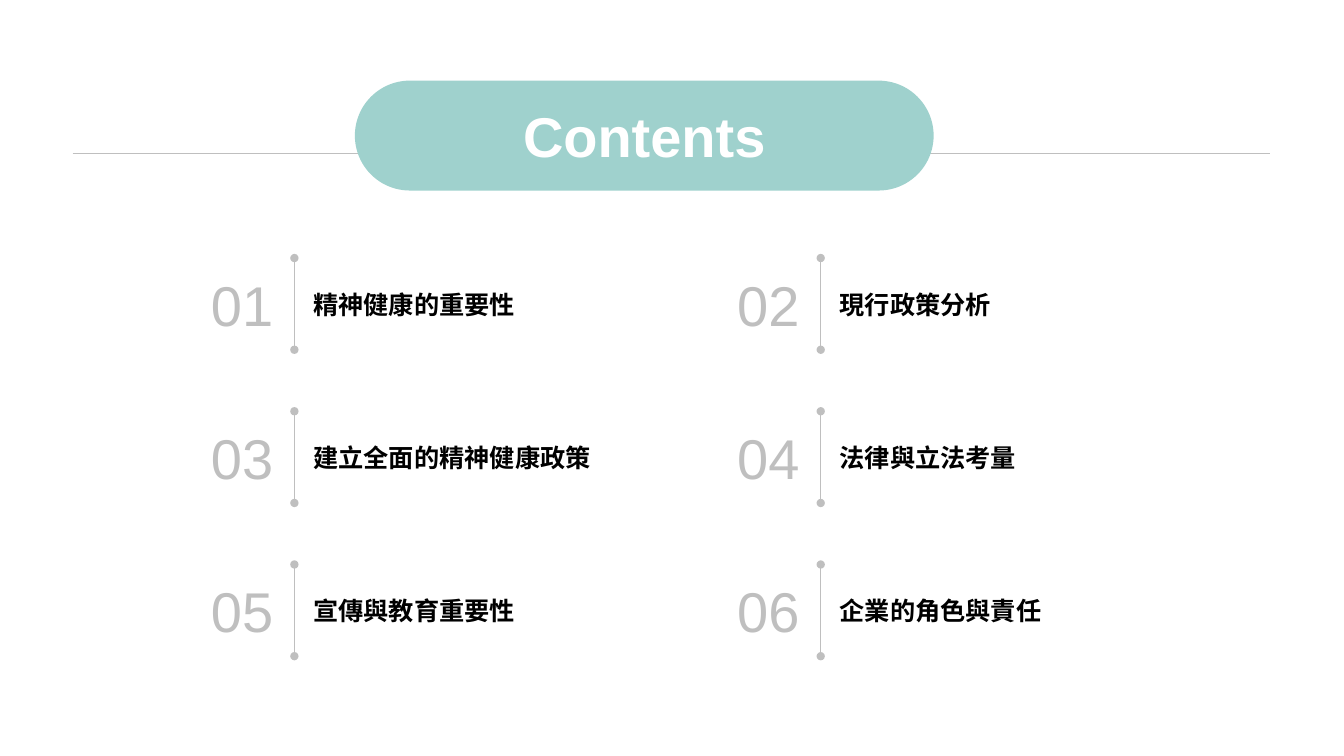
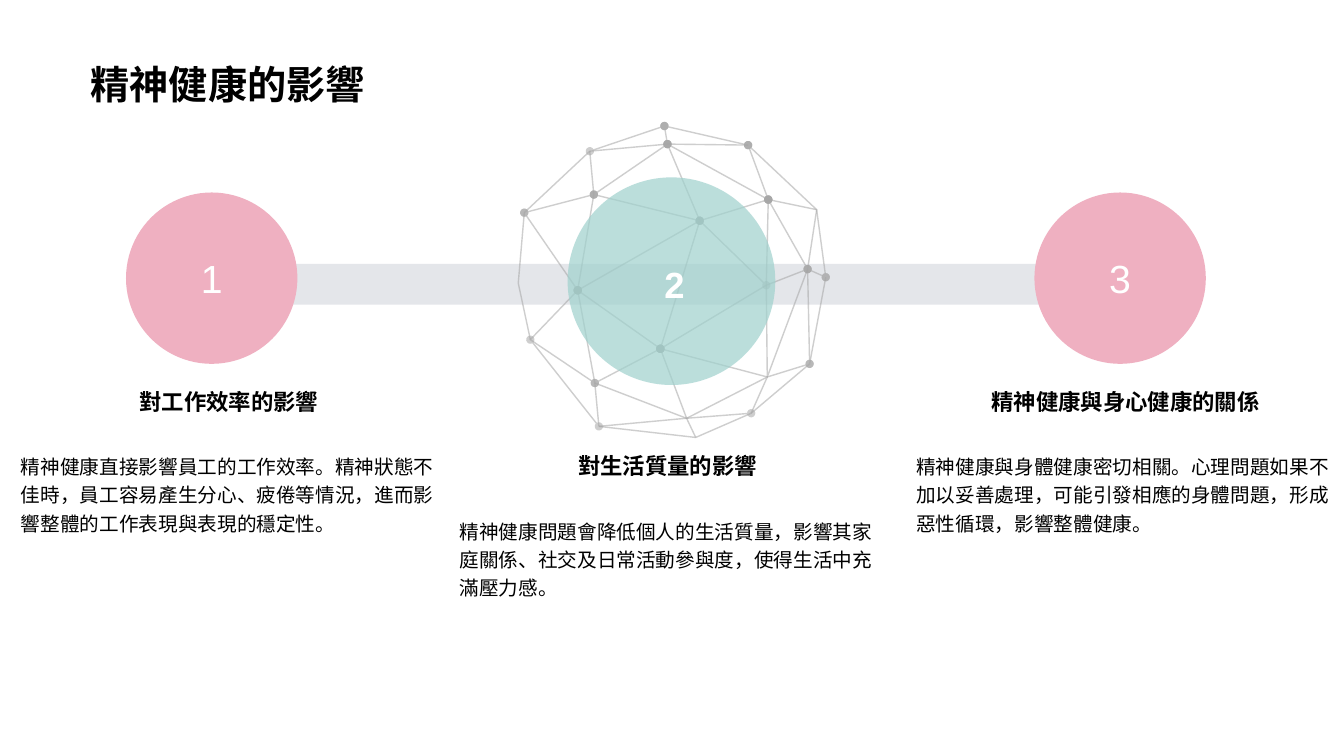
import lxml.etree
import pptx
import pptx.dml.color
import pptx.enum.shapes
import pptx.enum.text
import pptx.oxml.ns
import pptx.util

Inches = pptx.util.Inches
qn = pptx.oxml.ns.qn
SHAPES = pptx.enum.shapes.MSO_SHAPE
STRAIGHT = pptx.enum.shapes.MSO_CONNECTOR.STRAIGHT
ANCHORS = pptx.enum.text.MSO_ANCHOR
ALIGNS = pptx.enum.text.PP_ALIGN

COLOURS = {"mint": "9FD1CD", "pink": "EFB0C1", "band": "E4E6EA", "rule": "BFBFBF",
           "net": "A6A6A6", "ink": "000000", "paper": "FFFFFF"}
LATIN = "Arial"
CHINESE = "Noto Sans CJK SC"

STYLES = {
    "contents": {"size": 40, "name": LATIN, "bold": True, "colour": "paper"},
    "number": {"size": 40, "name": LATIN, "bold": False, "colour": "rule"},
    "topic": {"size": 18, "name": CHINESE, "bold": True, "colour": "ink"},
    "title": {"size": 28, "name": CHINESE, "bold": True, "colour": "ink"},
    "step": {"size": 28, "name": LATIN, "bold": False, "colour": "paper"},
    "core": {"size": 26, "name": LATIN, "bold": True, "colour": "paper"},
    "label": {"size": 16, "name": CHINESE, "bold": True, "colour": "ink"},
    "body": {"size": 14, "name": CHINESE, "bold": False, "colour": "ink"},
}

TOPICS = ["精神健康的重要性", "現行政策分析", "建立全面的精神健康政策",
          "法律與立法考量", "宣傳與教育重要性", "企業的角色與責任"]

IMPACTS = [
    (0.11, 3.8, 4.32, "對工作效率的影響",
     "精神健康直接影響員工的工作效率。精神狀態不佳時，員工容易產生分心、疲倦等情況，進而影響整體的工作表現與表現的穩定性。"),
    (4.46, 4.44, 4.32, "對生活質量的影響",
     "精神健康問題會降低個人的生活質量，影響其家庭關係、社交及日常活動參與度，使得生活中充滿壓力感。"),
    (8.99, 3.8, 4.35, "精神健康與身心健康的關係",
     "精神健康與身體健康密切相關。心理問題如果不加以妥善處理，可能引發相應的身體問題，形成惡性循環，影響整體健康。"),
]

NODES = {
    "A": (1.45, 0), "B": (2.28, 0.19), "C": (2.96, 0.83), "D": (3.05, 1.5),
    "E": (2.89, 2.36), "F": (2.31, 2.85), "G": (1.76, 3.09), "H": (0.8, 2.98),
    "I": (0.12, 2.12), "J": (0, 1.56), "K": (0.06, 0.86), "L": (0.71, 0.25),
    "M": (1.48, 0.18), "N": (0.75, 0.68), "O": (0.59, 1.63), "P": (0.76, 2.55),
    "Q": (1.41, 2.21), "R": (1.67, 2.9), "S": (1.8, 0.94), "T": (2.48, 0.73),
    "U": (2.87, 1.42), "V": (2.46, 1.58), "W": (2.47, 2.49),
}
STRANDS = {
    (): "HGFED KJI LMB OPH LK UCT PRWF",
    ("headEnd",): "QRG EU TVWU FRH",
    ("tailEnd",): "LNO",
    ("headEnd", "tailEnd"): "BA DCB IH AL MSQ AM DU TB UT QWE OQ KO NK MN TM "
                            "ST OS PIO QP UVQ SV NS",
}


def paint(colour_format, colour, opacity=100):
    colour_format.rgb = pptx.dml.color.RGBColor.from_string(COLOURS[colour])


def fade(properties, opacity):
    for colour in properties.iter(qn("a:srgbClr")):
        lxml.etree.SubElement(colour, qn("a:alpha"), val=str(opacity * 1000))


def write(shape, text, style, align=ALIGNS.CENTER, anchor=ANCHORS.MIDDLE, spacing=1.0):
    frame = shape.text_frame
    for name, value in {"word_wrap": True, "vertical_anchor": anchor}.items():
        setattr(frame, name, value)
    para = frame.paragraphs[0]
    for name, value in {"alignment": align, "line_spacing": spacing}.items():
        setattr(para, name, value)
    span = para.add_run()
    span.text = text
    look = STYLES[style]
    values = {"size": pptx.util.Pt(look["size"]), "name": look["name"], "bold": look["bold"]}
    for name, value in values.items():
        setattr(span.font, name, value)
    span.font.fill.solid()
    paint(span.font.fill.fore_color, look["colour"])
    lxml.etree.SubElement(span.font.fill._xPr, qn("a:ea"), typeface=look["name"])


def add_text(shapes, box, text, style, **layout):
    shape = shapes.add_textbox(*map(Inches, box))
    write(shape, text, style, **layout)
    return shape


def add_filled(shapes, kind, box, colour, adjustments=()):
    shape = shapes.add_shape(kind, *map(Inches, box))
    for index, value in enumerate(adjustments):
        shape.adjustments[index] = value
    shape.fill.solid()
    paint(shape.fill.fore_color, colour)
    shape.line.fill.background()
    shape.shadow.inherit = False
    return shape


def add_path(shapes, points, colour, width, dotted_ends=()):
    places = [(Inches(x), Inches(y)) for x, y in points]
    if len(places) == 2:
        shape = shapes.add_connector(STRAIGHT, *places[0], *places[1])
        lxml.etree.SubElement(shape.element.spPr, qn("a:effectLst"))
    else:
        builder = shapes.build_freeform(*places[0], scale=1.0)
        builder.add_line_segments(places[1:], close=False)
        shape = builder.convert_to_shape()
        shape.fill.background()
        shape.shadow.inherit = False
    shape.line.width = pptx.util.Pt(width)
    shape.line.fill.solid()
    paint(shape.line.fill.fore_color, colour)
    outline = shape.element.spPr.find(qn("a:ln"))
    for end in dotted_ends:
        lxml.etree.SubElement(outline, qn("a:" + end), type="oval")
    return outline


def add_topic(page, left, top, number, topic):
    height = 0.91
    shape = add_text(page.shapes, (left, top, 0.82, height), f"{number:02}", "number")
    for side in ("margin_left", "margin_right"):
        setattr(shape.text_frame, side, 0)
    add_text(page.shapes, (left + 1.02, top + 0.26, 3.94, 0.4), topic, "topic",
             align=ALIGNS.LEFT)
    divider = left + 0.93
    add_path(page.shapes, [(divider, top), (divider, top + height)], "rule", 1,
             ("headEnd", "tailEnd"))


def add_globe(page, left, top):
    globe = page.shapes.add_group_shape().shapes
    for dotted_ends, strands in STRANDS.items():
        for strand in strands.split():
            points = [(left + NODES[node][0], top + NODES[node][1]) for node in strand]
            fade(add_path(globe, points, "net", 1, dotted_ends), 54)
    core = add_filled(globe, SHAPES.OVAL, (left + 0.49, top + 0.51, 2.06, 2.06), "mint")
    fade(core.element.spPr, 70)
    add_text(globe, (left + 0.59, top + 1.3, 1.92, 0.48), "2", "core", anchor=ANCHORS.TOP)


def add_step(page, left, top, number):
    circle = add_filled(page.shapes, SHAPES.OVAL, (left, top, 1.7, 1.7), "pink")
    write(circle, number, "step")


def add_impact(page, left, top, width, label, body):
    add_text(page.shapes, (left, top, width, 0.37), label, "label", anchor=ANCHORS.TOP)
    add_text(page.shapes, (left, top + 0.62, width, 0.73), body, "body",
             align=ALIGNS.LEFT, anchor=ANCHORS.TOP, spacing=1.2)


def build_contents(page):
    add_path(page.shapes, [(0.72, 1.52), (12.6, 1.52)], "rule", 0.25)
    banner = add_filled(page.shapes, SHAPES.ROUNDED_RECTANGLE, (3.52, 0.8, 5.74, 1.09),
                        "mint", [0.5])
    write(banner, "Contents", "contents")
    for index, topic in enumerate(TOPICS):
        row, column = divmod(index, 2)
        add_topic(page, 1.99 + column * 5.22, 2.56 + row * 1.52, index + 1, topic)


def build_impacts(page):
    add_text(page.shapes, (0.8, 0, 11.73, 1.12), "精神健康的影響", "title",
             align=ALIGNS.LEFT, anchor=ANCHORS.BOTTOM, spacing=0.9)
    add_filled(page.shapes, SHAPES.RIGHT_ARROW, (2.68, 2.56, 8.04, 0.52), "band", [0.78, 0.5])
    add_step(page, 1.25, 1.91, "1")
    add_globe(page, 5.14, 1.25)
    add_step(page, 10.26, 1.91, "3")
    for impact in IMPACTS:
        add_impact(page, *impact)


def main():
    deck = pptx.Presentation()
    deck.slide_width = Inches(13.33)
    deck.slide_height = Inches(7.5)
    for build in (build_contents, build_impacts):
        build(deck.slides.add_slide(deck.slide_layouts[6]))
    deck.save("out.pptx")


if __name__ == "__main__":
    main()
